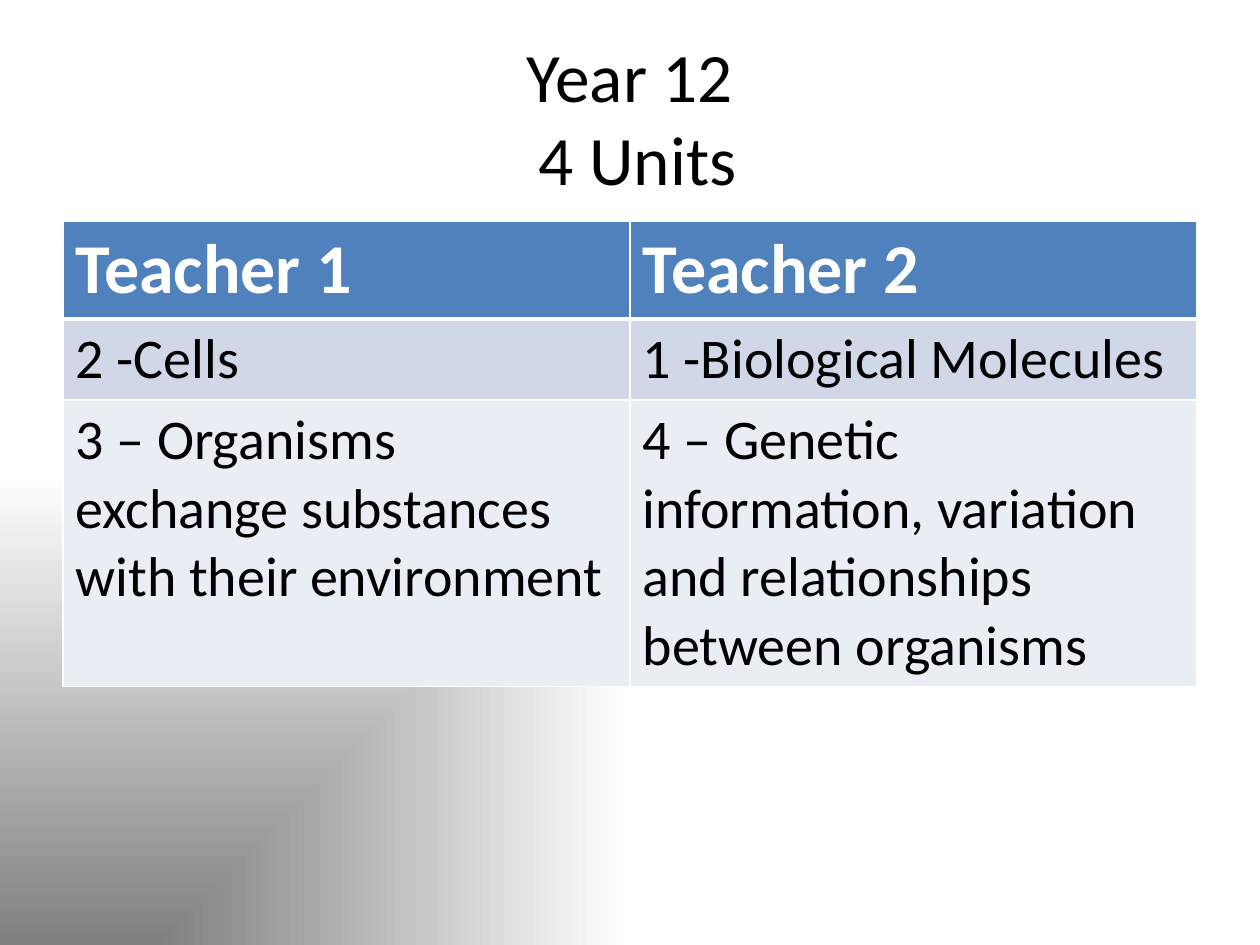
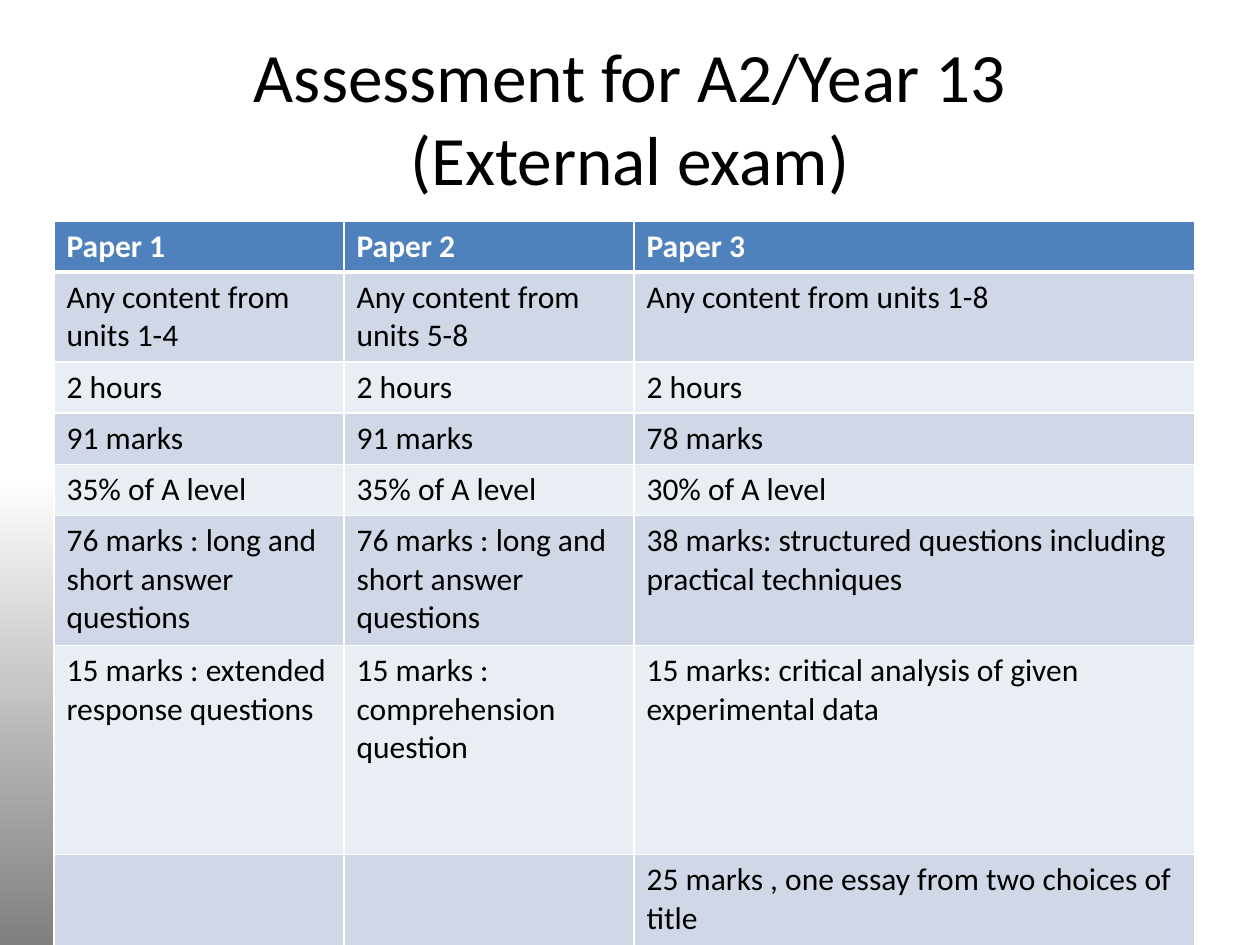
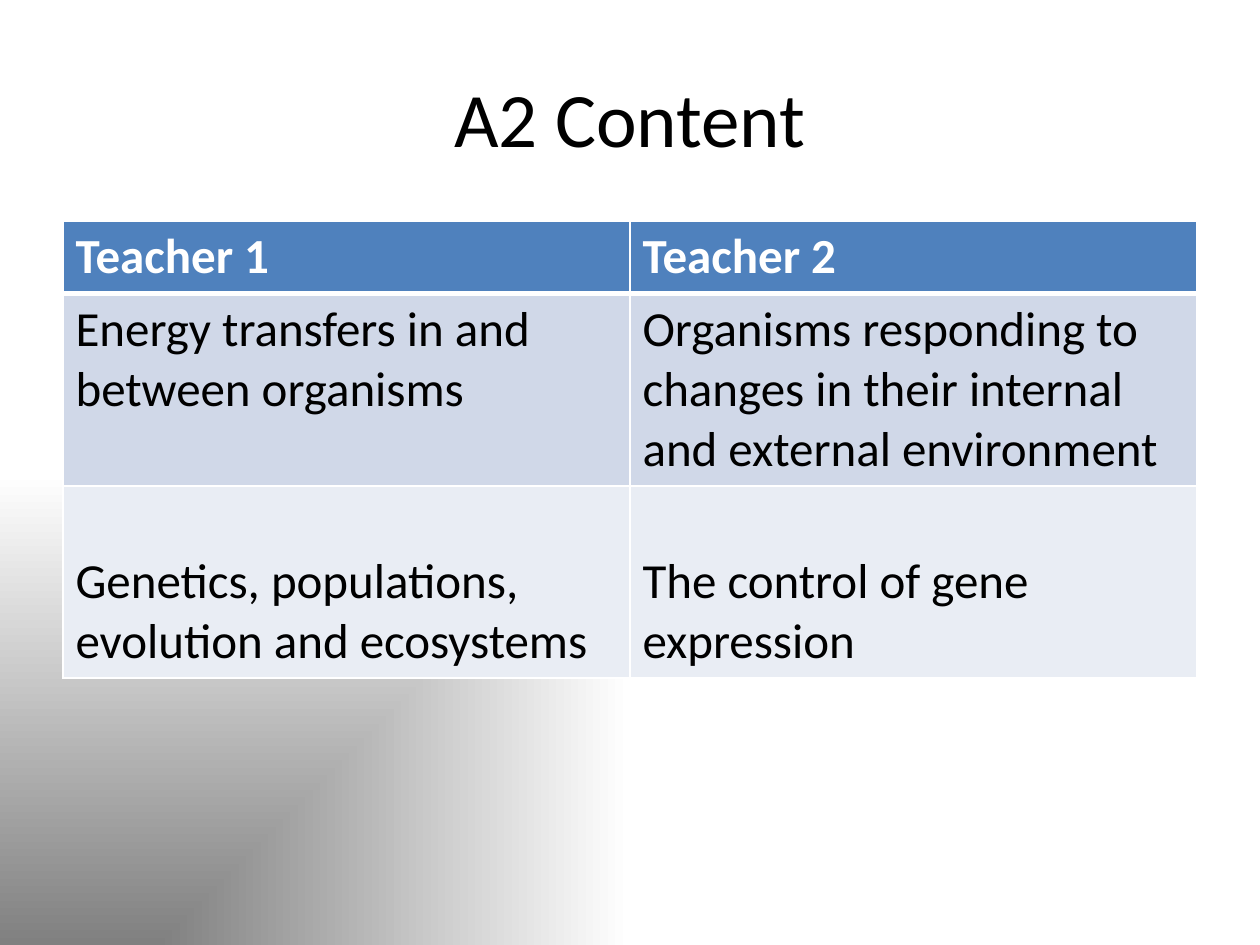
from dataclasses import dataclass

from pptx import Presentation
from pptx import util as u
from pptx.dml.color import RGBColor
from pptx.enum import text
from pptx.oxml import parse_xml
from pptx.oxml.ns import nsdecls, qn


@dataclass(frozen=True)
class Theme:
    font: str = "Calibri"
    ink: str = "000000"
    paper: str = "FFFFFF"
    shade: str = "808080"
    header: str = "4F81BD"
    bands: tuple = ("D0D8E8", "E9EDF4")
    title: float = 44
    title_two_lines: float = 39.6
    grid: float = 1
    header_rule: float = 3


THEME = Theme()
PX_PER_INCH = 126
TABLE_TOP = 221


def px(n):
    return u.Emu(round(n * 914400 / PX_PER_INCH))


def place(sp, left, top, width, height):
    sp.left, sp.top, sp.width, sp.height = map(px, (left, top, width, height))


def set_font(p, size, color, bold=False):
    p.font.name = THEME.font
    p.font.size = u.Pt(size)
    p.font.bold = bold
    p.font.color.rgb = RGBColor.from_string(color)


def set_background(master):
    bg = parse_xml(
        f'<p:bg {nsdecls("p", "a")}><p:bgPr><a:gradFill rotWithShape="1"><a:gsLst>'
        f'<a:gs pos="0"><a:srgbClr val="{THEME.shade}"/></a:gs>'
        f'<a:gs pos="100000"><a:srgbClr val="{THEME.paper}"/></a:gs></a:gsLst>'
        '<a:path path="rect"><a:fillToRect l="0" t="100000" r="100000" b="0"/></a:path>'
        '</a:gradFill><a:effectLst/></p:bgPr></p:bg>'
    )
    c_sld = master.element.find(qn("p:cSld"))
    old = c_sld.find(qn("p:bg"))
    if old is not None:
        c_sld.remove(old)
    c_sld.insert(0, bg)


def add_slide(prs, *lines):
    s = prs.slides.add_slide(prs.slide_layouts.get_by_name("Title Only"))
    sp = s.shapes.title
    place(sp, 63, 38, 1134, 157)
    tf = sp.text_frame
    tf.text = "\v".join(lines)
    tf.word_wrap = True
    tf.auto_size = text.MSO_AUTO_SIZE.NONE
    tf.vertical_anchor = text.MSO_ANCHOR.MIDDLE
    p = tf.paragraphs[0]
    p.alignment = text.PP_ALIGN.CENTER
    set_font(p, THEME.title if len(lines) == 1 else THEME.title_two_lines, THEME.ink)
    return s


def set_borders(cell, is_header):
    rules = {"L": THEME.grid, "R": THEME.grid}
    if is_header:
        rules["T"] = THEME.grid
    rules["B"] = THEME.header_rule if is_header else THEME.grid
    tc_pr = cell._tc.get_or_add_tcPr()
    for side, width in rules.items():
        tc_pr.append(parse_xml(
            f'<a:ln{side} {nsdecls("a")} w="{u.Pt(width)}"><a:solidFill>'
            f'<a:srgbClr val="{THEME.paper}"/></a:solidFill></a:ln{side}>'
        ))


def style_cell(cell, row, size):
    is_header = row == 0
    set_borders(cell, is_header)
    fill = THEME.header if is_header else THEME.bands[(row - 1) % 2]
    cell.fill.solid()
    cell.fill.fore_color.rgb = RGBColor.from_string(fill)
    color = THEME.paper if is_header else THEME.ink
    set_font(cell.text_frame.paragraphs[0], size, color, is_header)


def add_table(s, left, widths, heights, rows, header_size, body_size):
    frame = s.shapes.add_table(len(rows), len(widths), px(left), px(TABLE_TOP),
                               px(sum(widths)), px(sum(heights)))
    table = frame.table
    table.horz_banding = False
    for column, width in zip(table.columns, widths):
        column.width = px(width)
    for i, (height, values) in enumerate(zip(heights, rows)):
        table.rows[i].height = px(height)
        for j, value in enumerate(values):
            cell = table.cell(i, j)
            cell.text = value
            style_cell(cell, i, body_size if i else header_size)
    return table


def main():
    prs = Presentation()
    prs.slide_width, prs.slide_height = px(1260), px(945)
    set_background(prs.slide_master)
    teachers = ("Teacher 1", "Teacher 2")
    halves = (567, 567)

    s = add_slide(prs, "Year 12", " 4 Units")
    add_table(s, 63, halves, (98, 81, 286), [
        teachers,
        ("2 -Cells", "1 -Biological Molecules"),
        ("3 – Organisms exchange substances with their environment",
         "4 – Genetic information, variation and relationships between organisms"),
    ], 40, 32)

    s = add_slide(prs, "Assessment for A2/Year 13", "(External exam)")
    add_table(s, 54, (290, 290, 561), (51, 90, 51, 51, 51, 130, 209, 91), [
        ("Paper 1", "Paper 2", "Paper 3"),
        ("Any content from units 1-4", "Any content from units 5-8",
         "Any content from units 1-8"),
        ("2 hours",) * 3,
        ("91 marks", "91 marks", "78 marks"),
        ("35% of A level", "35% of A level", "30% of A level"),
        ("76 marks : long and short answer questions",
         "76 marks : long and short answer questions",
         "38 marks: structured questions including practical techniques"),
        ("15 marks : extended response questions",
         "15 marks : comprehension question",
         "15 marks: critical analysis of given experimental data"),
        ("", "", "25 marks , one essay from two choices of title"),
    ], 18, 18)

    s = add_slide(prs, "A2 Content")
    table = add_table(s, 63, halves, (72, 192, 192), [
        teachers,
        ("Energy transfers in and between organisms",
         "Organisms responding to changes in their internal and external environment"),
        ("Genetics, populations, evolution and ecosystems",
         "The control of gene expression"),
    ], 28, 28)
    for cell in table.rows[2].cells:
        cell.vertical_anchor = text.MSO_ANCHOR.BOTTOM

    prs.save("out.pptx")


if __name__ == "__main__":
    main()
